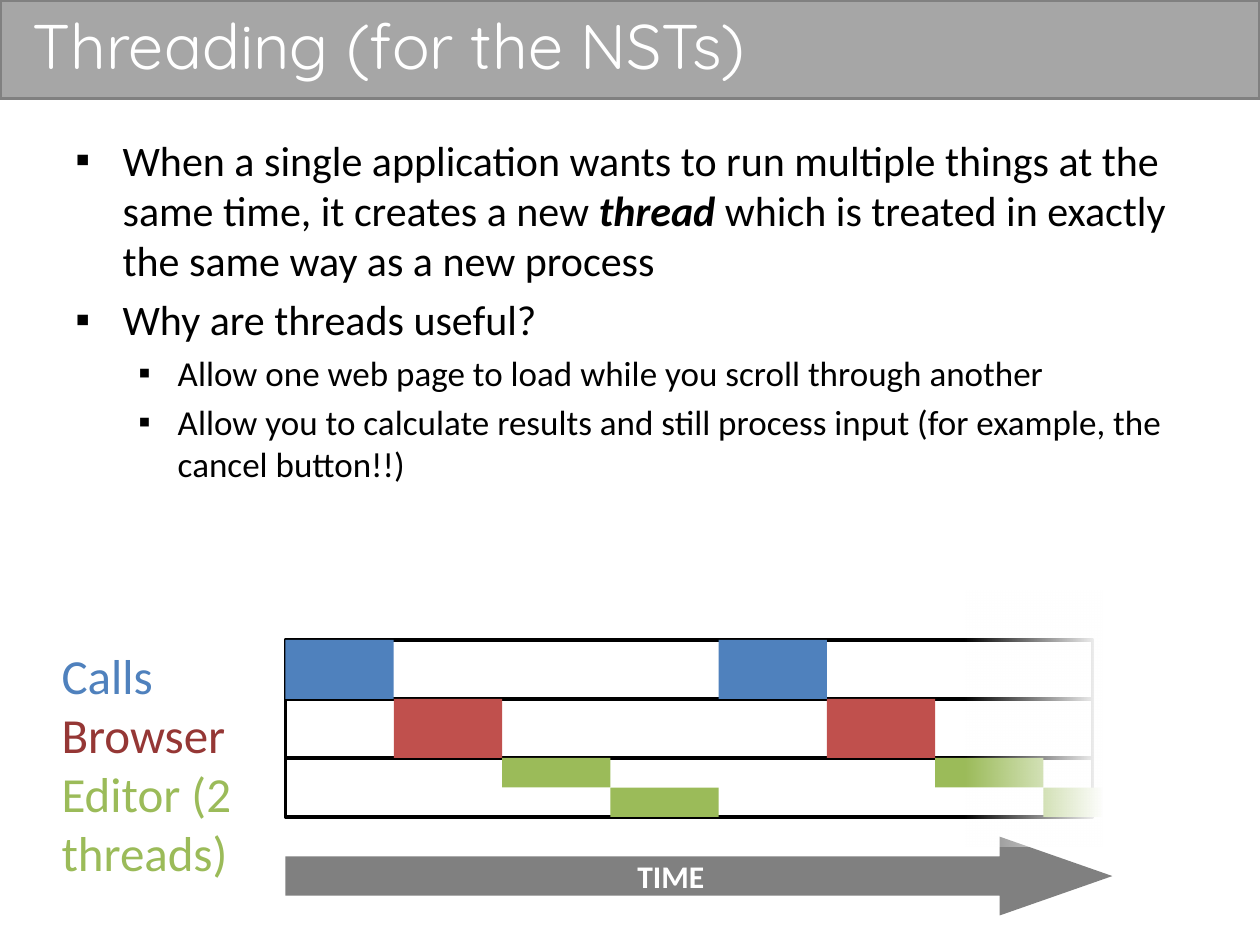
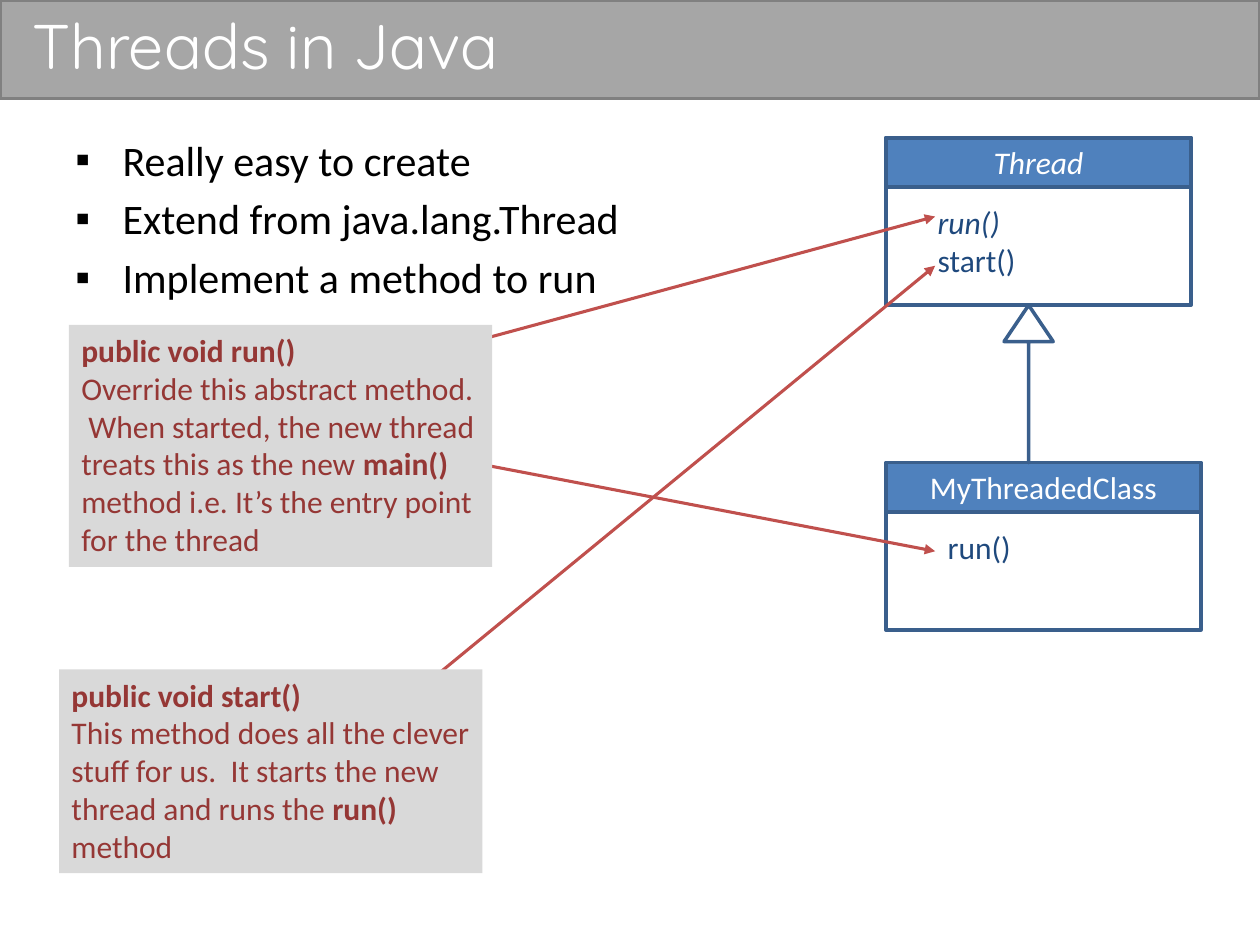
from pptx import Presentation
from pptx.dml.color import RGBColor
from pptx.enum.shapes import MSO_CONNECTOR, MSO_SHAPE
from pptx.enum.text import MSO_ANCHOR, MSO_AUTO_SIZE, PP_ALIGN
from pptx.oxml.ns import qn
from pptx.util import Emu, Pt
from lxml import etree

RECT, PROCESS = MSO_SHAPE.RECTANGLE, MSO_SHAPE.FLOWCHART_PROCESS
RIGHT, UP = MSO_SHAPE.RIGHT_ARROW, MSO_SHAPE.UP_ARROW
STRAIGHT = MSO_CONNECTOR.STRAIGHT
TOP, MIDDLE = MSO_ANCHOR.TOP, MSO_ANCHOR.MIDDLE
LEFT, CENTER = PP_ALIGN.LEFT, PP_ALIGN.CENTER
FIXED = MSO_AUTO_SIZE.NONE

WHITE = RGBColor(0xFF, 0xFF, 0xFF)
BLACK = RGBColor(0x00, 0x00, 0x00)
SILVER = RGBColor(0xA6, 0xA6, 0xA6)
GRAY = RGBColor(0x80, 0x80, 0x80)
PALE = RGBColor(0xD9, 0xD9, 0xD9)
BLUE = RGBColor(0x4F, 0x81, 0xBD)
EDGE = RGBColor(0x3A, 0x5F, 0x8C)
NAVY = RGBColor(0x1F, 0x49, 0x7D)
RED = RGBColor(0xC0, 0x50, 0x4D)
MAROON = RGBColor(0x95, 0x37, 0x35)
GREEN = RGBColor(0x9B, 0xBB, 0x59)

PX = 914400 / 128  # EMU in one px


def box(slide, kind, place, fill=None, edge=None):
    """Add a preset shape, or a text box if kind is None; place is in px."""
    place = [Emu(round(n * PX)) for n in place]
    if kind is None:
        return slide.shapes.add_textbox(*place)
    shape = slide.shapes.add_shape(kind, *place)
    shape.shadow.inherit = False
    if fill is None:
        shape.fill.background()
    else:
        shape.fill.solid()
        shape.fill.fore_color.rgb = fill
    if edge is None:
        shape.line.fill.background()
    else:
        shape.line.color.rgb = edge
        shape.line.width = Pt(2)
    return shape


def write(shape, paras, size, color, align=LEFT, anchor=TOP, font="Calibri"):
    """Fill shape with paragraphs, each a list of runs whose odd ones are bold."""
    frame = shape.text_frame
    frame.word_wrap = True
    frame.auto_size = FIXED
    frame.vertical_anchor = anchor
    frame.text = "\n".join(runs[0] for runs in paras)
    for para, runs in zip(frame.paragraphs, paras):
        para.alignment = align
        for text in runs[1:]:
            para.add_run().text = text
        for i, run in enumerate(para.runs):
            run.font.name = font
            run.font.size = Pt(size)
            run.font.color.rgb = color
            run.font.bold = i % 2 == 1
    return frame.paragraphs


deck = Presentation()
deck.slide_width = Emu(round(1280 * PX))
deck.slide_height = Emu(round(960 * PX))
layout = deck.slide_layouts[5]

# Title and bullets of both slides; each bullet is (level, runs)
pages = [
    ("Threading (for the NSTs)", [
        (0, ["When a single application wants to run multiple things at the same "
             "time, it creates a new ", "thread",
             " which is treated in exactly the same way as a new process"]),
        (0, ["Why are threads useful?"]),
        (1, ["Allow one web page to load while you scroll through another"]),
        (1, ["Allow you to calculate results and still process input "
             "(for example, the cancel button!!)"]),
    ]),
    ("Threads in Java", [
        (0, ["Really easy to create"]),
        (0, ["Extend from java.lang.Thread"]),
        (0, ["Implement a method to run"]),
    ]),
]
levels = [(24, 48, 48), (20, 104, 40)]  # size, margin, hanging indent

slides = []
bodies = []
for name, points in pages:
    slide = deck.slides.add_slide(layout)
    slides.append(slide)
    title = slide.shapes.title
    title.left, title.top = Emu(round(20 * PX)), Emu(0)
    title.width, title.height = Emu(round(1220 * PX)), Emu(round(90 * PX))
    write(title, [[name]], 36, WHITE, anchor=MIDDLE, font="Quicksand")

    body = box(slide, None, (64, 130, 1152, 770))
    paras = write(body, [runs for level, runs in points], 24, BLACK)
    bodies.append(paras)
    for para, (level, runs) in zip(paras, points):
        size, margin, hang = levels[level]
        para.level = level
        para.space_before = Pt(size / 5)
        for run in para.runs:
            run.font.size = Pt(size)
        props = para._p.get_or_add_pPr()
        props.set("marL", str(round(margin * PX)))
        props.set("indent", str(round(-hang * PX)))
        etree.SubElement(props, qn("a:buFont")).set("typeface", "Arial")
        etree.SubElement(props, qn("a:buChar")).set("char", "▪")

# The band lives in the layout, behind every title
band = box(slides[0], RECT, (0, 0, 1280, 100), SILVER, GRAY)
layout.shapes.element.insert(2, band.element)

# Slide 1: time slots shared by three programs
slide = slides[0]
bodies[0][0].runs[1].font.italic = True

lane, slot = 60, 110
left, top = 290, 650
for row in range(3):
    box(slide, RECT, (left, top + row * lane, 820, lane), edge=BLACK)

labels = box(slide, None, (50, top, 233, 255))
apps = [["Calls"], ["Browser"], ["Editor (2 threads)"]]
for para, color in zip(write(labels, apps, 28, BLUE), (BLUE, MAROON, GREEN)):
    para.runs[0].font.color.rgb = color

# Turns in running order: lane offset, height, colour
turns = [(0, lane, BLUE), (lane, lane, RED),
         (2 * lane, lane // 2, GREEN), (5 * lane // 2, lane // 2, GREEN)]
for i in range(8):
    drop, tall, color = turns[i % 4]
    wide = 60 if i == 7 else slot
    box(slide, RECT, (left + i * slot, top + drop, wide, tall), color)

time = box(slide, RIGHT, (left, 850, 840, 80), GRAY)
time.adjustments[0], time.adjustments[1] = 0.5, 1.43
write(time, [["TIME"]], 18, WHITE, CENTER, MIDDLE)[0].runs[0].font.bold = True

fade = box(slide, RECT, (980, 600, 140, 260))
fade.fill.gradient()
fade.fill.gradient_angle = 0
for stop, place in zip(fade.fill.gradient_stops, (0, 1)):
    stop.color.rgb = WHITE
    stop.position = place
clear = fade.element.spPr.find(".//" + qn("a:srgbClr"))
etree.SubElement(clear, qn("a:alpha")).set("val", "0")

# Slide 2: class diagram with notes
slide = slides[1]
classes = [
    ("Thread", 140, 310, (940, 182, 91), [["run()"], ["start()"]]),
    ("MyThreadedClass", 470, 320, (950, 188, 51), [["run()"]]),
]
for name, top, wide, (inset, span, tall), methods in classes:
    box(slide, PROCESS, (900, top, wide, 170), edge=EDGE)
    head = box(slide, RECT, (900, top, wide, 50), BLUE, EDGE)
    heading = write(head, [[name]], 18, WHITE, CENTER, MIDDLE)
    members = box(slide, None, (inset, top + 60, span, tall))
    listed = write(members, methods, 18, NAVY)
    if name == "Thread":  # abstract parts are italic
        heading[0].runs[0].font.italic = True
        listed[0].runs[0].font.italic = True

parent = box(slide, UP, (1020, 310, 50, 160), edge=EDGE)
parent.adjustments[0], parent.adjustments[1] = 0, 0.74

for ends in [(470, 350, 950, 220), (390, 730, 950, 270), (480, 470, 950, 560)]:
    link = slide.shapes.add_connector(STRAIGHT, *[Emu(round(n * PX)) for n in ends])
    link.line.color.rgb = RED
    link.line.width = Pt(1.75)
    etree.SubElement(link.line._get_or_add_ln(), qn("a:tailEnd")).set("type", "triangle")
    etree.SubElement(link.element.spPr, qn("a:effectLst"))

notes = [
    ((70, 330, 430, 246), [
        ["public void run()"],
        ["Override this abstract method.  When started, the new thread treats "
         "this as the new ", "main() ",
         "method i.e. It’s the entry point for the thread"]]),
    ((60, 680, 430, 207), [
        ["public void start()"],
        ["This method does all the clever stuff for us.  It starts the new "
         "thread and runs the ", "run() ", "method"]]),
]
for place, paras in notes:
    note = box(slide, RECT, place, PALE)
    write(note, paras, 18, MAROON)[0].runs[0].font.bold = True

deck.save("out.pptx")
